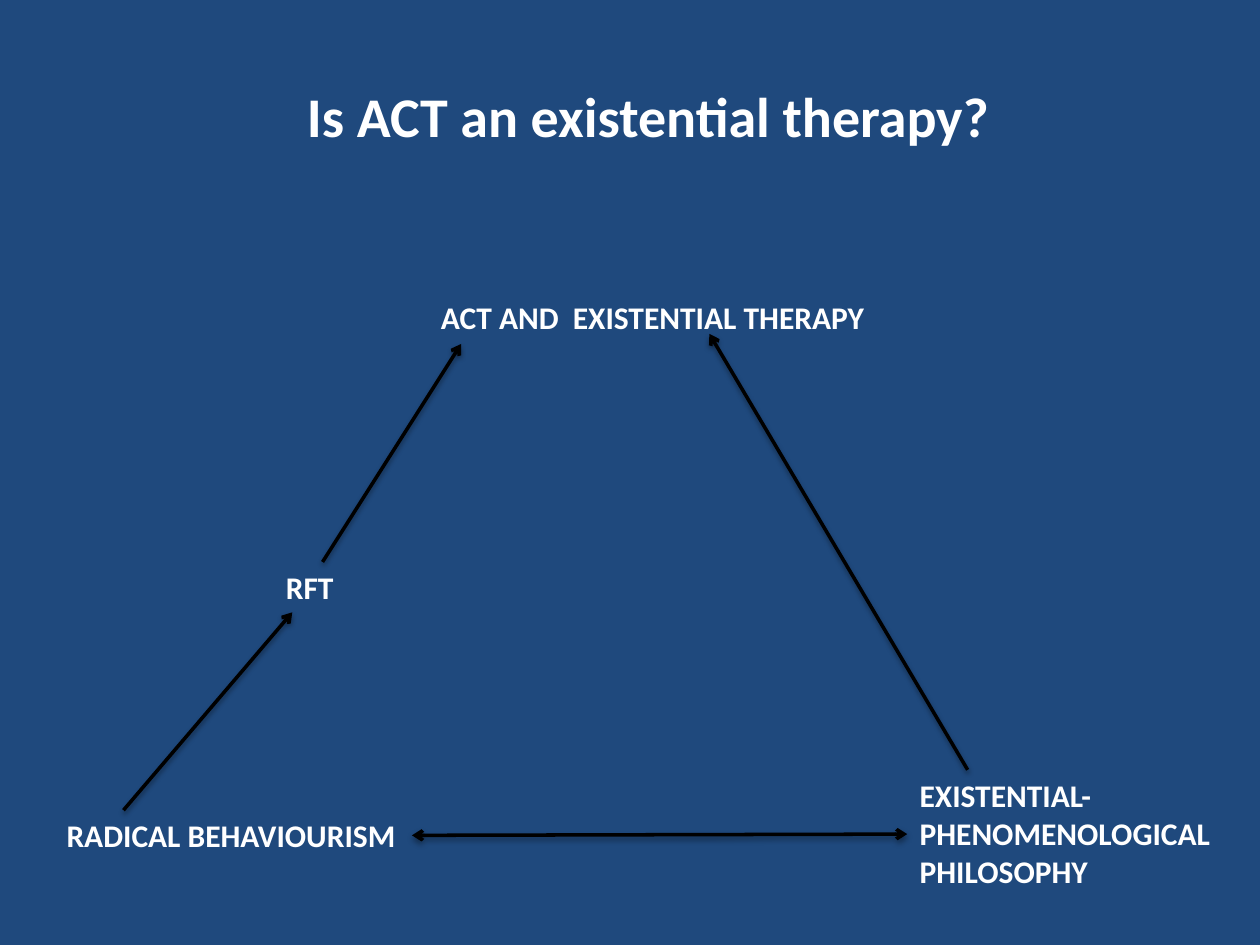
"""Build the slide asking whether ACT is an existential therapy."""
from lxml.etree import SubElement
from pptx import Presentation
from pptx.dml.color import RGBColor
from pptx.enum.shapes import MSO_CONNECTOR
from pptx.enum.text import MSO_AUTO_SIZE, PP_ALIGN
from pptx.oxml.ns import qn
from pptx.util import Inches, Pt

NAVY = RGBColor(0x1F, 0x49, 0x7D)
WHITE = RGBColor(0xFF, 0xFF, 0xFF)
BLACK = RGBColor(0, 0, 0)
FONT = "Calibri"

LABELS = [
    ("Is ACT an existential therapy?", (1.35, 0.6, 7.59, 0.64), 32, PP_ALIGN.CENTER),
    ("ACT AND  EXISTENTIAL THERAPY", (2.54, 2.32, 5.28, 0.4), 18, PP_ALIGN.CENTER),
    ("RFT", (2.17, 4.46, 0.79, 0.4), 18, PP_ALIGN.LEFT),
    ("RADICAL BEHAVIOURISM", (0.43, 6.43, 2.83, 0.4), 18, PP_ALIGN.LEFT),
    ("EXISTENTIAL-\nPHENOMENOLOGICAL PHILOSOPHY", (7.2, 6.11, 2.52, 1.01), 18, PP_ALIGN.LEFT),
]
ARROWS = [
    ((0.98, 6.43), (2.32, 4.86), ["tailEnd"]),
    ((2.56, 4.46), (3.66, 2.73), ["tailEnd"]),
    ((7.68, 6.11), (5.63, 2.65), ["tailEnd"]),
    ((3.27, 6.63), (7.2, 6.62), ["headEnd", "tailEnd"]),
]


def add_label(s, text, box, size, align):
    tf = s.shapes.add_textbox(*map(Inches, box)).text_frame
    tf.word_wrap = True
    tf.auto_size = MSO_AUTO_SIZE.SHAPE_TO_FIT_TEXT
    tf.text = text
    for p in tf.paragraphs:
        p.alignment = align
        for r in p.runs:
            r.font.name = FONT
            r.font.size = Pt(size)
            r.font.bold = True
            r.font.color.rgb = WHITE


def add_shadow(sp):
    effects = SubElement(sp._element.spPr, qn("a:effectLst"))
    shadow = SubElement(effects, qn("a:outerShdw"), blurRad=str(Pt(3.1)),
                        dist=str(Pt(1.6)), dir="5400000", rotWithShape="0")
    color = SubElement(shadow, qn("a:srgbClr"), val=str(BLACK))
    SubElement(color, qn("a:alpha"), val="38000")


def add_arrow(s, start, end, heads):
    sp = s.shapes.add_connector(MSO_CONNECTOR.STRAIGHT, *map(Inches, start + end))
    sp.line.color.rgb = BLACK
    sp.line.width = Pt(2)
    ln = sp.line._get_or_add_ln()
    for head in heads:
        SubElement(ln, qn(f"a:{head}"), type="arrow")
    add_shadow(sp)


def main():
    prs = Presentation()
    prs.slide_width, prs.slide_height = Inches(10), Inches(7.5)
    s = prs.slides.add_slide(prs.slide_layouts[6])
    s.background.fill.solid()
    s.background.fill.fore_color.rgb = NAVY
    for label in LABELS:
        add_label(s, *label)
    for arrow in ARROWS:
        add_arrow(s, *arrow)
    prs.save("out.pptx")


if __name__ == "__main__":
    main()
